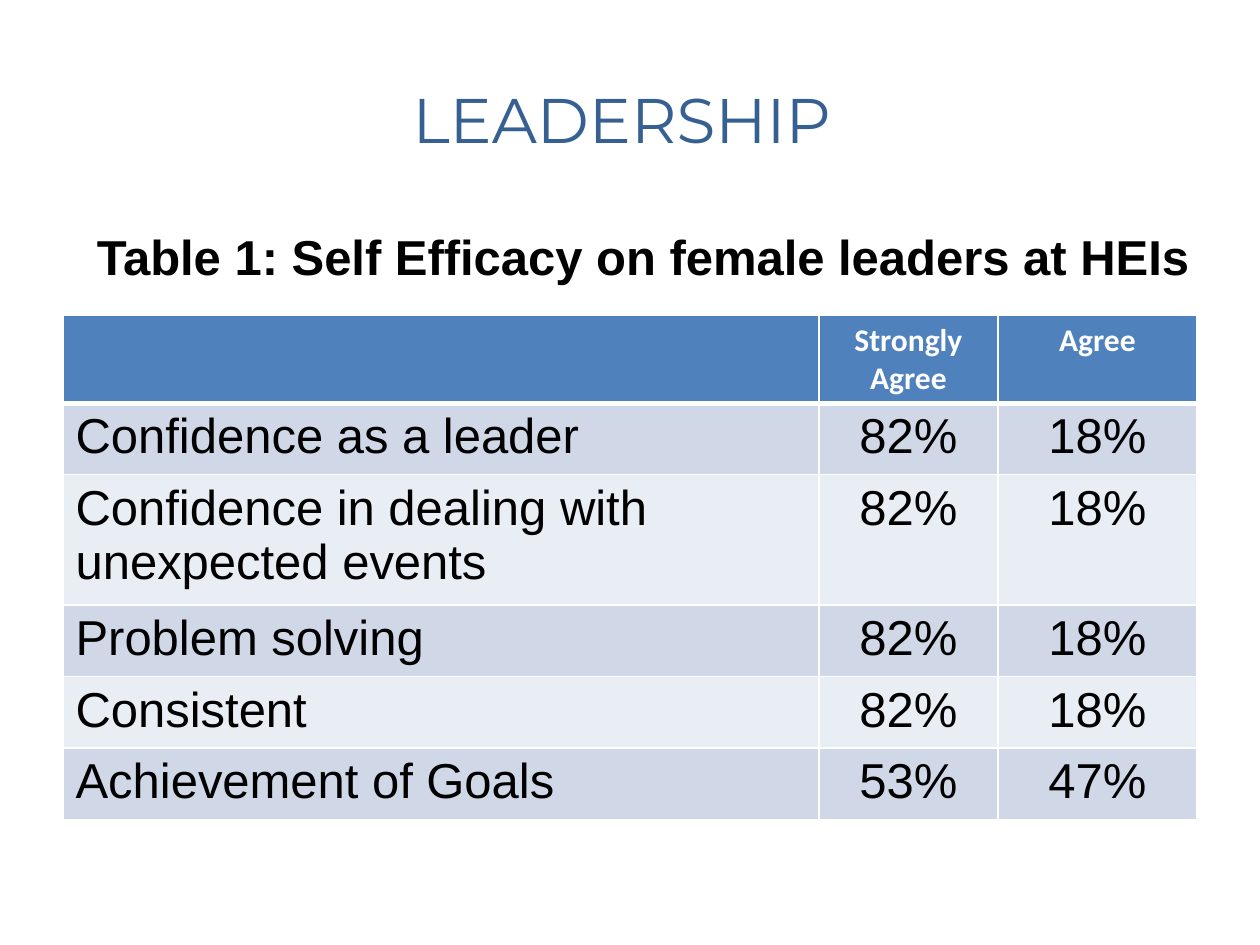
from lxml.etree import SubElement as Sub
from pptx import Presentation
from pptx.dml.color import RGBColor as Color
from pptx.enum.text import MSO_ANCHOR as Anchor, PP_ALIGN as Align
from pptx.oxml.ns import qn
from pptx.util import Inches, Pt

WHITE = Color(0xFF, 0xFF, 0xFF)
BLACK = Color(0, 0, 0)
NAVY = Color(0x37, 0x60, 0x92)
BLUE = Color(0x4F, 0x81, 0xBD)
BANDS = Color(0xE9, 0xED, 0xF4), Color(0xD0, 0xD8, 0xE8)

WIDE, HIGH = Inches(10), Inches(7.5)
TITLE = dict(name="Montserrat", size=Pt(36), bold=False, color=NAVY)
LABEL = dict(name="Arial", size=Pt(28), bold=True, color=BLACK)
HEAD = dict(name="Calibri", size=Pt(18), bold=True, color=WHITE)
BODY = dict(LABEL, bold=False)

COLS = 6, 1.42, 1.58
TALL = 0.7, 0.53, 0.97, 0.53, 0.53, 0.53
ROWS = [
    ("", "Strongly Agree", "Agree"),
    ("Confidence as a leader", "82%", "18%"),
    ("Confidence in dealing with unexpected events", "82%", "18%"),
    ("Problem solving", "82%", "18%"),
    ("Consistent", "82%", "18%"),
    ("Achievement of Goals", "53%", "47%"),
]


def share(x, y, w, h):
    """Turn shares of the slide's size into lengths."""
    return int(x * WIDE), int(y * HIGH), int(w * WIDE), int(h * HIGH)


def write(frame, text, look, align):
    para = frame.paragraphs[0]
    para.alignment = align
    run = para.add_run()
    run.text = text
    for key, value in look.items():
        if key == "color":
            run.font.color.rgb = value
        else:
            setattr(run.font, key, value)


def add_text(slide, box, text, look, align, anchor):
    frame = slide.shapes.add_textbox(*share(*box)).text_frame
    frame.word_wrap = True
    frame.vertical_anchor = anchor
    write(frame, text, look, align)


def edge(cell, base):
    """Draw white cell borders, the lower one base points wide."""
    props = cell._tc.get_or_add_tcPr()
    for side, width in zip("LRTB", (1, 1, 1, base)):
        line = Sub(props, qn(f"a:ln{side}"), w=str(Pt(width)))
        fill = Sub(line, qn("a:solidFill"))
        Sub(fill, qn("a:srgbClr"), val=str(WHITE))


def add_grid(slide, box):
    table = slide.shapes.add_table(len(ROWS), len(COLS), *share(*box)).table
    for col, width in zip(table.columns, COLS):
        col.width = Inches(width)
    for row, height in zip(table.rows, TALL):
        row.height = Inches(height)
    for r, texts in enumerate(ROWS):
        for c, text in enumerate(texts):
            cell = table.cell(r, c)
            edge(cell, 1 if r else 3)
            cell.fill.solid()
            cell.fill.fore_color.rgb = BANDS[r % 2] if r else BLUE
            if text:
                align = Align.CENTER if c else Align.LEFT
                write(cell.text_frame, text, BODY if r else HEAD, align)


def main():
    deck = Presentation()
    deck.slide_width, deck.slide_height = WIDE, HIGH
    slide = deck.slides.add_slide(deck.slide_layouts[6])
    add_text(slide, (0.05, 0.04, 0.9, 0.17), "LEADERSHIP ", TITLE,
             Align.CENTER, Anchor.MIDDLE)
    add_grid(slide, (0.05, 1 / 3, 0.9, 0.51))
    add_text(slide, (0.067, 0.233, 0.9, 0.076),
             "Table 1: Self Efficacy on female leaders at HEIs", LABEL,
             Align.LEFT, Anchor.TOP)
    deck.save("out.pptx")


if __name__ == "__main__":
    main()
